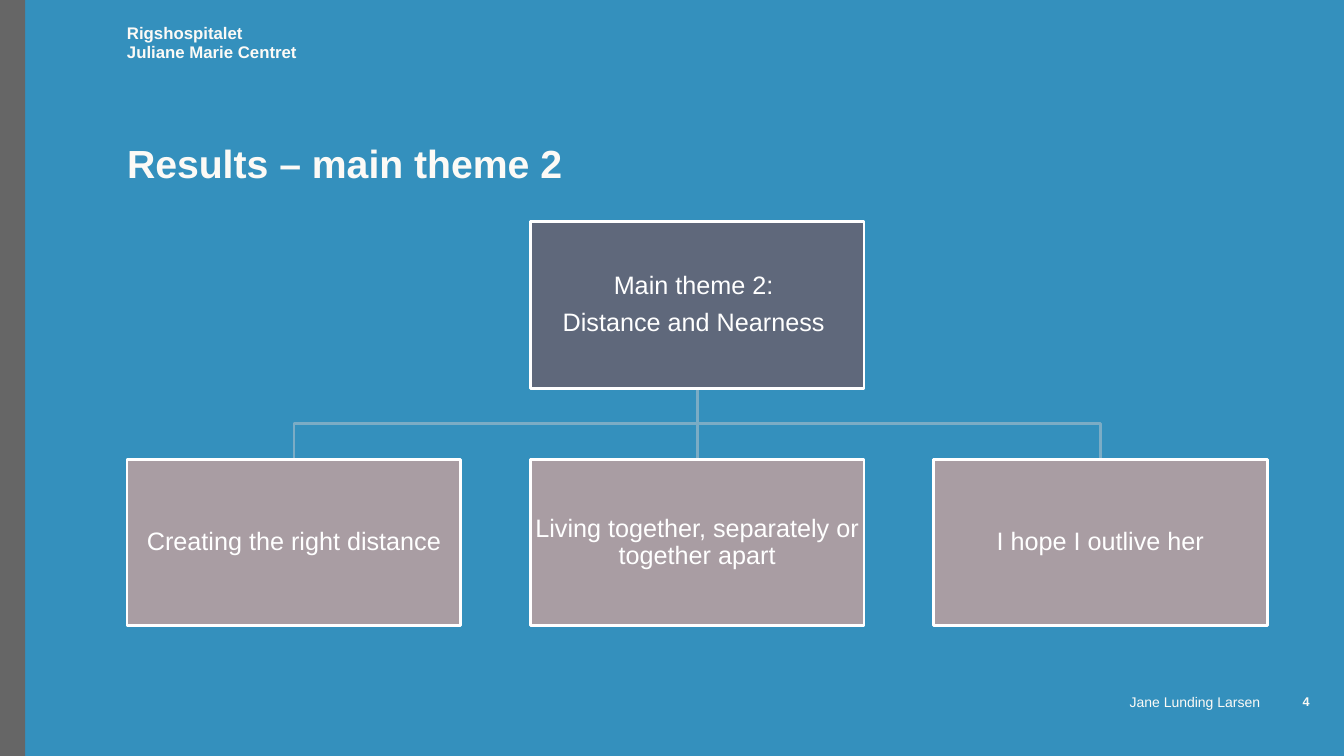
from lxml import etree
from pptx import Presentation
from pptx import util as u
from pptx.dml import color
from pptx.enum import shapes, text
from pptx.oxml import ns

FONT = "Arial"
CREAM, WHITE = "FCFAF6", "FFFFFF"
BACKGROUND, SIDEBAR = "3490BD", "666666"
THEME_FILL, SUBTHEME_FILL, BRANCH = "5F687B", "A99DA3", "7BACC5"
MARGIN = 90.75


def paint(target, value):
    """Give a fill, or the fill of a line, a solid colour."""
    target.solid()
    target.fore_color.rgb = color.RGBColor.from_string(value)


def write(shape, *lines, size=12, hue=CREAM, bold=False, align="LEFT",
          anchor="TOP", inset=0, spacing=None, after=0):
    frame = shape.text_frame
    frame.word_wrap = True
    frame.auto_size = text.MSO_AUTO_SIZE.NONE
    frame.vertical_anchor = getattr(text.MSO_ANCHOR, anchor)
    frame.margin_left = frame.margin_right = u.Pt(inset)
    frame.margin_top = frame.margin_bottom = u.Pt(inset)
    for index, line in enumerate(lines):
        paragraph = frame.add_paragraph() if index else frame.paragraphs[0]
        paragraph.alignment = getattr(text.PP_ALIGN, align)
        paragraph.space_before = u.Pt(0)
        paragraph.space_after = u.Pt(after if index < len(lines) - 1 else 0)
        if spacing:
            paragraph.line_spacing = spacing
        run = paragraph.add_run()
        run.text = line
        run.font.name, run.font.size, run.font.bold = FONT, u.Pt(size), bold
        run.font.color.rgb = color.RGBColor.from_string(hue)


def add_label(slide, left, top, width, height, line, **style):
    box = slide.shapes.add_textbox(*map(u.Pt, (left, top, width, height)))
    write(box, line, **style)


def add_box(slide, left, top, width, height, fill, outline=None):
    box = slide.shapes.add_shape(
        shapes.MSO_SHAPE.RECTANGLE, *map(u.Pt, (left, top, width, height)))
    box.shadow.inherit = False
    paint(box.fill, fill)
    if outline:
        paint(box.line.fill, outline)
        box.line.width = u.Pt(2)
    else:
        box.line.fill.background()
    return box


def add_branch(slide, start, end):
    """Link two points, with a bend halfway down unless one is below the other."""
    (x1, y1), (x2, y2) = start, end
    if x1 == x2:
        branch = slide.shapes.add_connector(
            shapes.MSO_CONNECTOR.STRAIGHT, *map(u.Pt, (x1, y1, x2, y2)))
        etree.SubElement(branch.line._get_or_add_ln().getparent(),
                         ns.qn("a:effectLst"))
    else:
        middle = (y1 + y2) / 2
        builder = slide.shapes.build_freeform(u.Pt(x1), u.Pt(y1), scale=1.0)
        corners = [(x1, middle), (x2, middle), (x2, y2)]
        builder.add_line_segments(
            [(u.Pt(x), u.Pt(y)) for x, y in corners], close=False)
        branch = builder.convert_to_shape()
        branch.shadow.inherit = False
        branch.fill.background()
    paint(branch.line.fill, BRANCH)
    branch.line.width = u.Pt(2)


def add_frame(slide, width, height):
    """Sidebar, hospital name, author and page number."""
    add_box(slide, 0, 0, 18, height, SIDEBAR)
    add_label(slide, MARGIN, 16.5, 482, 17, "Rigshospitalet", bold=True)
    add_label(slide, MARGIN, 29.5, 482, 33, "Juliane Marie Centret", bold=True)
    footer_top = height - 44.5
    add_label(slide, width - 326, footer_top, 266, 14.5,
              "Jane Lunding Larsen", size=10, align="RIGHT")
    add_label(slide, width - 54, footer_top, 54, 14.5, "4",
              size=9, bold=True, align="CENTER")


def add_title(slide, left, top, width, height, line):
    title = slide.shapes.title
    title.left, title.top = u.Pt(left), u.Pt(top)
    title.width, title.height = u.Pt(width), u.Pt(height)
    write(title, line, size=28, bold=True, anchor="BOTTOM", spacing=0.85)


def add_theme_tree(slide, left, top, width, height, theme, subthemes):
    """A main theme centred above a row of subthemes."""
    box_width, box_height = 238.5, 119
    pitch = (width - box_width) / (len(subthemes) - 1)
    row_top = top + height - box_height
    centre = left + width / 2
    style = dict(size=18, hue=WHITE, align="CENTER", anchor="MIDDLE",
                 inset=0.75, spacing=0.9, after=7)

    # Branches lie behind the boxes
    lefts = [left + pitch * index for index in range(len(subthemes))]
    for box_left in lefts:
        add_branch(slide, (centre, top + box_height),
                   (box_left + box_width / 2, row_top))

    # Main theme, then subthemes
    main = add_box(slide, centre - box_width / 2, top, box_width, box_height,
                   THEME_FILL, WHITE)
    write(main, *theme, **style)
    for box_left, subtheme in zip(lefts, subthemes):
        box = add_box(slide, box_left, row_top, box_width, box_height,
                      SUBTHEME_FILL, WHITE)
        write(box, subtheme, **style)


def main():
    presentation = Presentation()
    width, height = 960, 540
    presentation.slide_width = u.Pt(width)
    presentation.slide_height = u.Pt(height)
    slide = presentation.slides.add_slide(presentation.slide_layouts[5])
    paint(slide.background.fill, BACKGROUND)

    add_frame(slide, width, height)
    add_title(slide, MARGIN, 68.5, 814.5, 65, "Results – main theme 2")
    add_theme_tree(
        slide, MARGIN, 158.5, 814.5, 288.5,
        ["Main theme 2: ", "Distance and Nearness "],
        ["Creating the right distance",
         "Living together, separately or together apart",
         "I hope I outlive her"])
    presentation.save("out.pptx")


if __name__ == "__main__":
    main()
